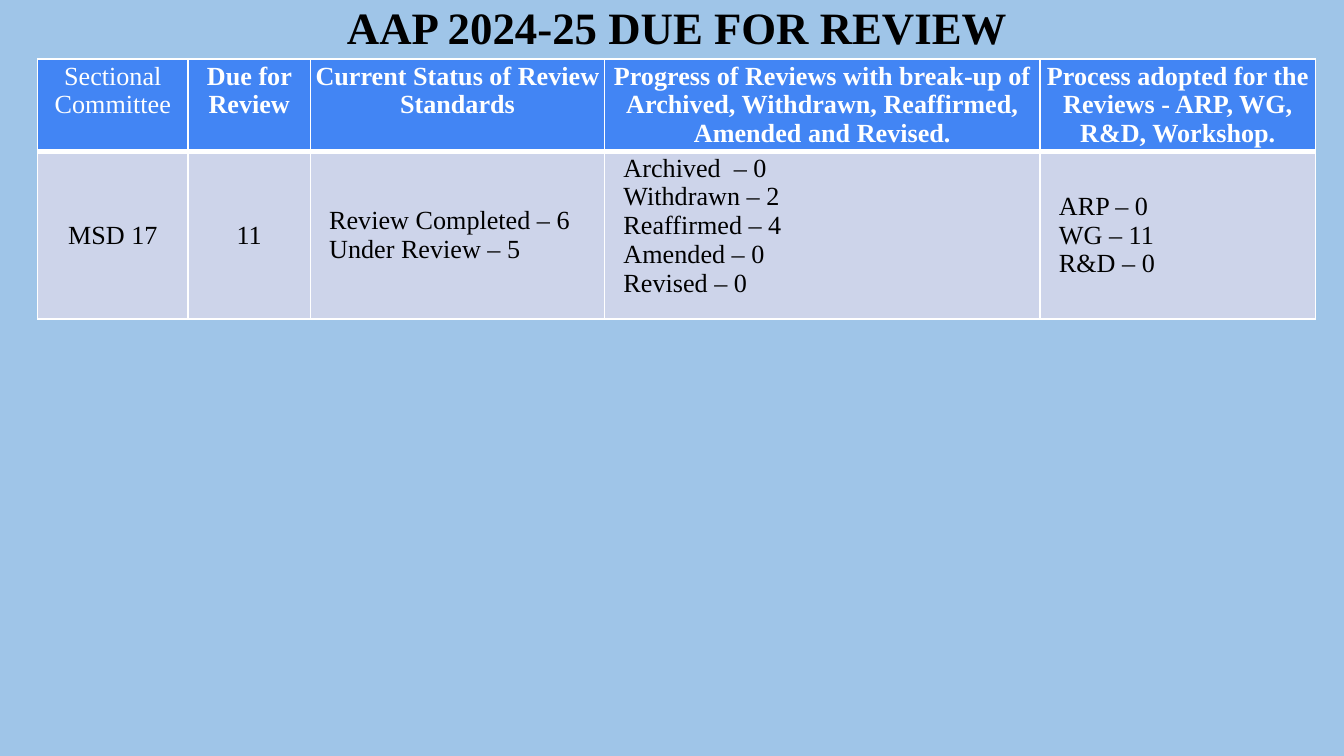
from lxml import etree
from pptx import Presentation
from pptx.dml.color import RGBColor
from pptx.enum.text import MSO_ANCHOR, MSO_AUTO_SIZE, PP_ALIGN
from pptx.oxml.ns import qn
from pptx.util import Inches, Pt

TOP, MIDDLE = MSO_ANCHOR.TOP, MSO_ANCHOR.MIDDLE
LEFT, CENTER = PP_ALIGN.LEFT, PP_ALIGN.CENTER
NO_AUTOFIT = MSO_AUTO_SIZE.NONE

SKY = RGBColor(0x9F, 0xC5, 0xE8)
BLUE = RGBColor(0x42, 0x85, 0xF4)
LAVENDER = RGBColor(0xCD, 0xD4, 0xEA)
WHITE = RGBColor(0xFF, 0xFF, 0xFF)
BLACK = RGBColor(0, 0, 0)
FONT = "Times New Roman"

TITLE = "AAP 2024-25 DUE FOR REVIEW"
HEADERS = [
    "Sectional Committee",
    "Due for Review",
    "Current Status of Review Standards",
    "Progress of Reviews with break-up of Archived, Withdrawn, Reaffirmed, Amended and Revised.",
    "Process adopted for the Reviews - ARP, WG, R&D, Workshop.",
]
VALUES = [
    ["MSD 17"],
    ["11"],
    ["Review Completed – 6", "Under Review – 5"],
    ["Archived  – 0", "Withdrawn – 2", "Reaffirmed – 4", "Amended – 0", "Revised – 0"],
    ["ARP – 0", "WG – 11", "R&D – 0"],
]
COLUMNS = [1.12, 0.91, 2.19, 3.24, 2.05]
ROWS = [0.56, 1.25]
TABLE_LEFT, TABLE_TOP = 0.28, 0.44


def style(p, size, color, bold, align):
    p.alignment = align
    p.font.name = FONT
    p.font.size = Pt(size)
    p.font.bold = bold
    p.font.color.rgb = color


def set_borders(cell, bottom):
    tcPr = cell._tc.get_or_add_tcPr()
    widths = {"a:lnL": 1, "a:lnR": 1, "a:lnT": 1, "a:lnB": bottom}
    for i, (tag, width) in enumerate(widths.items()):
        ln = etree.Element(qn(tag), w=str(Pt(width)))
        fill = etree.SubElement(ln, qn("a:solidFill"))
        etree.SubElement(fill, qn("a:srgbClr"), val=str(WHITE))
        tcPr.insert(i, ln)


def fill_cell(cell, lines, fill, color, bold, align, anchor, bottom):
    cell.margin_left = cell.margin_right = Inches(0.02)
    cell.margin_top = cell.margin_bottom = Inches(0.02)
    cell.vertical_anchor = anchor
    cell.fill.solid()
    cell.fill.fore_color.rgb = fill
    set_borders(cell, bottom)
    cell.text = "\n".join(lines)
    for p in cell.text_frame.paragraphs:
        style(p, 14, color, bold, align)
        if align == LEFT:
            p._p.get_or_add_pPr().set("marL", str(Inches(0.12)))


prs = Presentation()
prs.slide_width = Inches(10)
prs.slide_height = prs.slide_width * 9 // 16
s = prs.slides.add_slide(prs.slide_layouts[5])
s.background.fill.solid()
s.background.fill.fore_color.rgb = SKY

title = s.shapes.title
title.left, title.top = Inches(TABLE_LEFT), 0
title.width, title.height = Inches(sum(COLUMNS)), Inches(TABLE_TOP)
tf = title.text_frame
tf.text = TITLE
tf.auto_size = NO_AUTOFIT
tf.vertical_anchor = MIDDLE
tf.margin_left = tf.margin_right = Inches(0.07)
tf.margin_top = tf.margin_bottom = Inches(0.04)
p = tf.paragraphs[0]
p.line_spacing = 0.9
style(p, 24, BLACK, True, CENTER)

table = s.shapes.add_table(
    len(ROWS), len(COLUMNS), Inches(TABLE_LEFT), Inches(TABLE_TOP),
    Inches(sum(COLUMNS)), Inches(sum(ROWS)),
).table
for row, height in zip(table.rows, ROWS):
    row.height = Inches(height)
for i, (width, header, lines) in enumerate(zip(COLUMNS, HEADERS, VALUES)):
    table.columns[i].width = Inches(width)
    fill_cell(table.cell(0, i), [header], BLUE, WHITE, i > 0, CENTER, TOP, 3)
    align = LEFT if len(lines) > 1 else CENTER
    anchor = TOP if len(lines) > 3 else MIDDLE
    fill_cell(table.cell(1, i), lines, LAVENDER, BLACK, False, align, anchor, 1)

prs.save("out.pptx")
